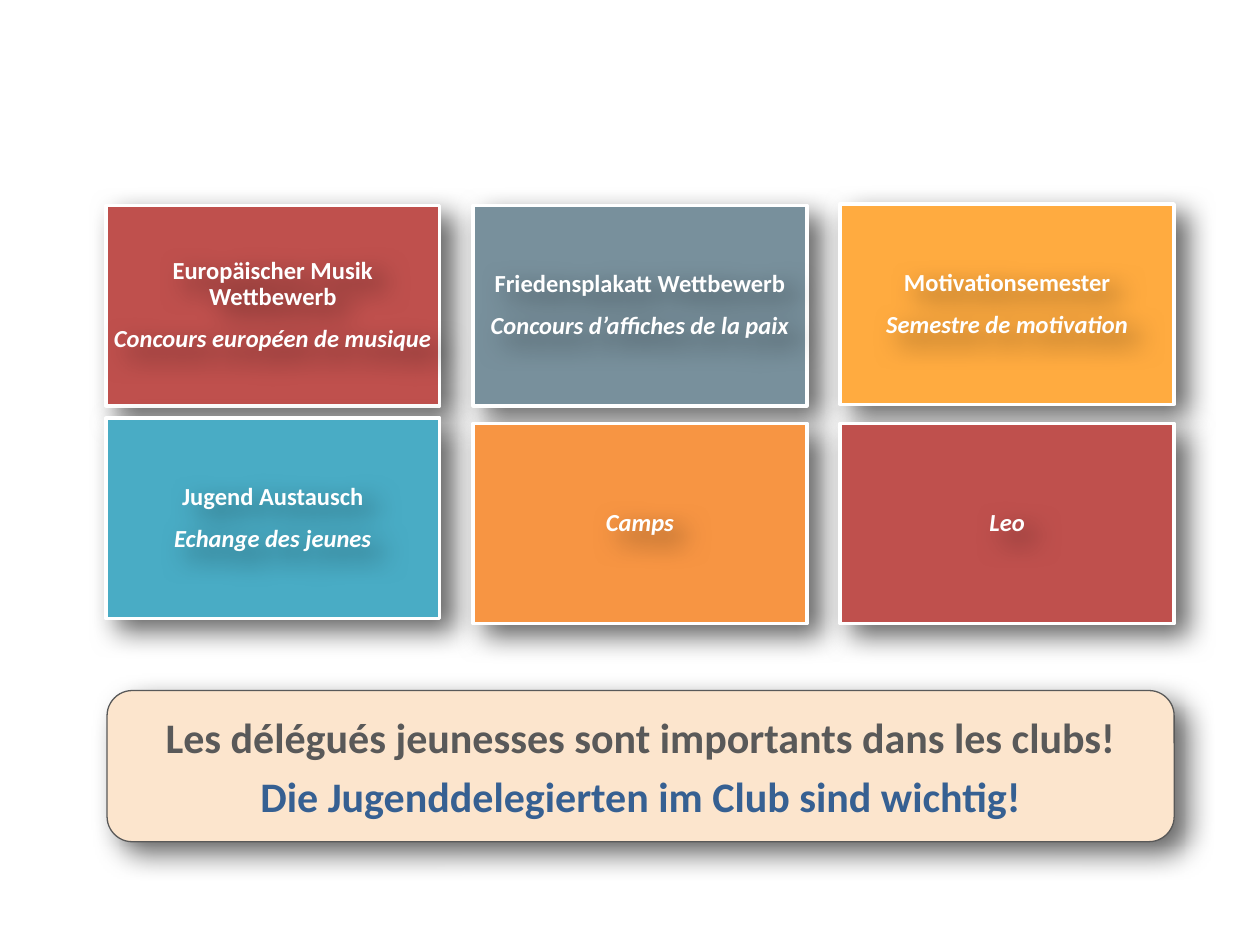
from lxml import etree
from pptx import Presentation
from pptx.dml.color import RGBColor
from pptx.enum.shapes import MSO_SHAPE
from pptx.enum.text import MSO_ANCHOR, PP_ALIGN
from pptx.oxml.ns import qn
from pptx.util import Pt

RECT, ROUND = MSO_SHAPE.RECTANGLE, MSO_SHAPE.ROUNDED_RECTANGLE
MIDDLE, CENTER = MSO_ANCHOR.MIDDLE, PP_ALIGN.CENTER
FONT = "Calibri"
COLORS = {"white": "FFFFFF", "black": "000000", "red": "BF504D",
          "slate": "78909C", "amber": "FFAB40", "teal": "49ACC5",
          "orange": "F79543", "cream": "FCE5CD", "gray": "595959",
          "blue": "366092"}

# Card grid: left edge, column pitch, card size
LEFT, PITCH, WIDTH, HEIGHT = 60.5, 209.8, 190.8, 114.5

# Column, top, fill, German line (may be absent), French line
CARDS = [
    (0, 117.4, "red", "Europäischer Musik Wettbewerb",
     "Concours européen de musique"),
    (1, 117.4, "slate", "Friedensplakatt Wettbewerb",
     "Concours d’affiches de la paix"),
    (2, 116.6, "amber", "Motivationsemester", "Semestre de motivation"),
    (0, 239, "teal", "Jugend Austausch", "Echange des jeunes"),
    (1, 241.9, "orange", None, "Camps"),
    (2, 241.9, "red", None, "Leo"),
]


def color(name):
    return RGBColor.from_string(COLORS[name])


def add_shadow(shape):
    """Soft shadow falling to the lower right."""
    shape.shadow.inherit = False
    effects = shape._element.spPr.find(qn("a:effectLst"))
    outer = etree.SubElement(
        effects, qn("a:outerShdw"), blurRad=str(Pt(15.8)),
        dist=str(Pt(9)), dir=str(40 * 60000), algn="tl", rotWithShape="0")
    tint = etree.SubElement(outer, qn("a:srgbClr"), val=COLORS["black"])
    etree.SubElement(tint, qn("a:alpha"), val="60000")


def add_panel(slide, kind, box, fill, line, weight):
    panel = slide.shapes.add_shape(kind, *map(Pt, box))
    panel.fill.solid()
    panel.fill.fore_color.rgb = color(fill)
    panel.line.color.rgb = color(line)
    panel.line.width = Pt(weight)
    add_shadow(panel)
    return panel


def set_frame(frame, inset):
    frame.word_wrap = True
    frame.vertical_anchor = MIDDLE
    frame.margin_left = frame.margin_right = Pt(inset)
    frame.margin_top = frame.margin_bottom = Pt(inset)


def add_line(frame, index, text, size, tone, gap, italic=False):
    para = frame.add_paragraph() if index else frame.paragraphs[0]
    para.text = text
    para.alignment = CENTER
    if index:
        para.space_before = Pt(gap)
    font = para.runs[0].font
    font.name, font.size, font.bold = FONT, Pt(size), True
    font.italic = italic
    font.color.rgb = color(tone)
    return para


def add_card(slide, box, fill, german, french):
    add_panel(slide, RECT, box, fill, "white", 2)
    # The label casts its own shadow on the card
    label = slide.shapes.add_textbox(*map(Pt, box))
    add_shadow(label)
    frame = label.text_frame
    set_frame(frame, 4.2)
    lines = [(text, text == french) for text in (german, french) if text]
    for index, (text, italic) in enumerate(lines):
        para = add_line(frame, index, text, 14, "white", 9, italic)
        para.line_spacing = 0.9


def add_banner(slide, box):
    banner = add_panel(slide, ROUND, box, "cream", "gray", 0.75)
    frame = banner.text_frame
    set_frame(frame, 7.2)
    lines = [("Les délégués jeunesses sont importants dans les clubs!", "gray"),
             ("Die Jugenddelegierten im Club sind wichtig!", "blue")]
    for index, (text, tone) in enumerate(lines):
        para = add_line(frame, index, text, 24, tone, 4.8)
        props = para._p.get_or_add_pPr()
        props.set("marL", str(Pt(27)))
        props.set("indent", str(Pt(-27)))


def main():
    deck = Presentation()
    deck.slide_width, deck.slide_height = Pt(720), Pt(540)
    slide = deck.slides.add_slide(deck.slide_layouts[6])
    for col, top, fill, german, french in CARDS:
        box = (LEFT + col * PITCH, top, WIDTH, HEIGHT)
        add_card(slide, box, fill, german, french)
    add_banner(slide, (61.2, 394.6, 609.8, 86.4))
    deck.save("out.pptx")


if __name__ == "__main__":
    main()
